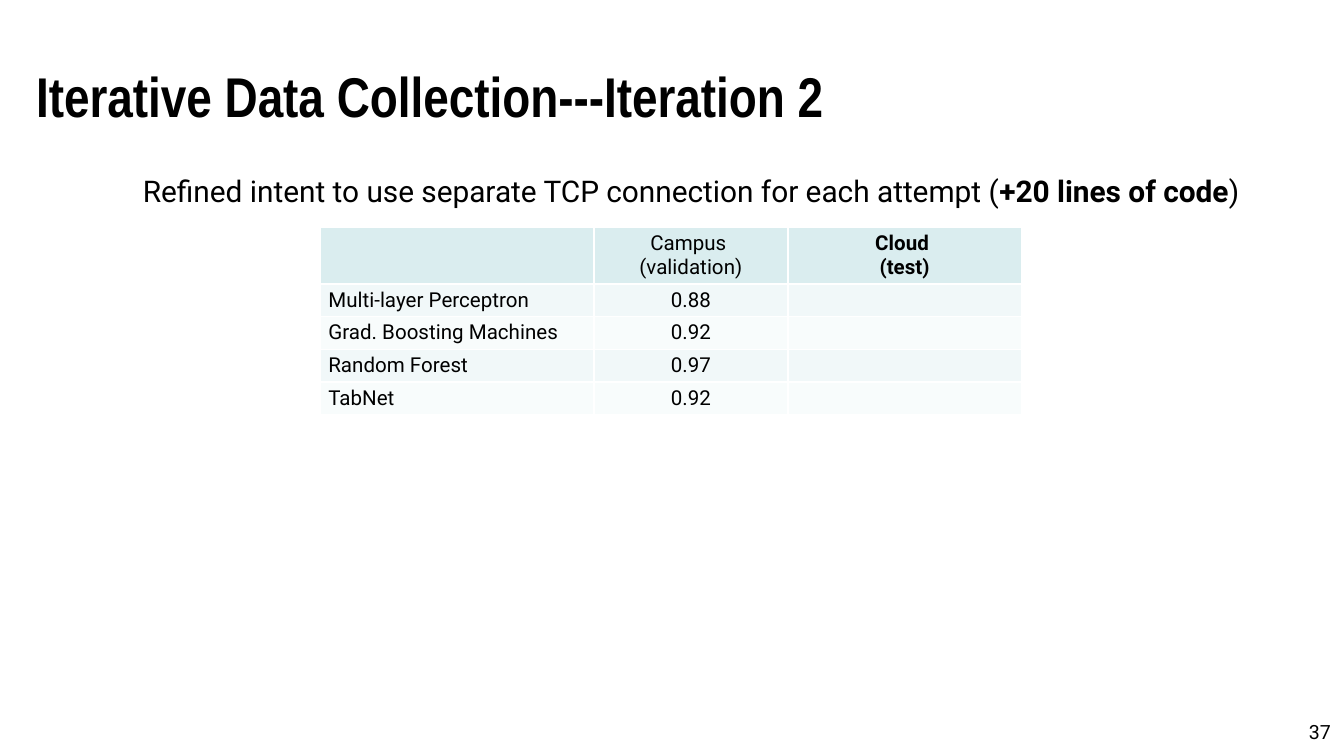
from dataclasses import dataclass

from lxml import etree
from pptx import Presentation
from pptx.dml.color import RGBColor
from pptx.enum.text import MSO_ANCHOR, MSO_AUTO_SIZE, PP_ALIGN
from pptx.oxml.ns import qn
from pptx.util import Pt

LEFT, CENTER, RIGHT = PP_ALIGN.LEFT, PP_ALIGN.CENTER, PP_ALIGN.RIGHT
TOP, MIDDLE = MSO_ANCHOR.TOP, MSO_ANCHOR.MIDDLE
NO_FIT = MSO_AUTO_SIZE.NONE

COLORS = {
    "text": "000000",
    "border": "FFFFFF",
    "header": "DAEDEF",
    "odd": "F1F8F9",
    "even": "F8FCFC",
}
BODY_FONT = "Roboto"
TITLE_FONT = "Arial Narrow"
CELL_SIZE = 11
COL_WIDTHS = (146.9, 103.7, 125.3)
HEADER_HEIGHT, ROW_HEIGHT = 30.5, 17.5


@dataclass(frozen=True)
class Score:
    model: str
    campus: str
    cloud: str = ""


SCORES = (
    Score("Multi-layer Perceptron", "0.88"),
    Score("Grad. Boosting Machines", "0.92"),
    Score("Random Forest", "0.97"),
    Score("TabNet", "0.92"),
)


def place(sp, left: float, top: float, width: float, height: float) -> None:
    sp.left, sp.top = Pt(left), Pt(top)
    sp.width, sp.height = Pt(width), Pt(height)


def style(p, size: float, name: str = BODY_FONT, bold: bool = False, align=LEFT) -> None:
    p.alignment = align
    p.font.size = Pt(size)
    p.font.name = name
    p.font.bold = bold
    p.font.color.rgb = RGBColor.from_string(COLORS["text"])


def set_borders(cell) -> None:
    tc_pr = cell._tc.get_or_add_tcPr()
    for i, side in enumerate(("lnL", "lnR", "lnT", "lnB")):
        ln = etree.Element(qn(f"a:{side}"), w=str(Pt(1)))
        fill = etree.SubElement(ln, qn("a:solidFill"))
        etree.SubElement(fill, qn("a:srgbClr"), val=COLORS["border"])
        tc_pr.insert(i, ln)


def fill_cell(cell, text: str, color: str, bold: bool = False, align=CENTER) -> None:
    cell.fill.solid()
    cell.fill.fore_color.rgb = RGBColor.from_string(COLORS[color])
    set_borders(cell)
    cell.margin_left = cell.margin_right = Pt(4.5)
    cell.margin_top = cell.margin_bottom = Pt(2.2)
    cell.text_frame.text = text
    for p in cell.text_frame.paragraphs:
        style(p, CELL_SIZE, bold=bold, align=align)
        if not text:
            etree.SubElement(p._p, qn("a:endParaRPr"), sz=str(CELL_SIZE * 100))


def add_scores(s) -> None:
    height = HEADER_HEIGHT + ROW_HEIGHT * len(SCORES)
    table = s.shapes.add_table(
        len(SCORES) + 1, len(COL_WIDTHS),
        Pt(171.4), Pt(121.7), Pt(sum(COL_WIDTHS)), Pt(height),
    ).table
    for col, width in zip(table.columns, COL_WIDTHS):
        col.width = Pt(width)
    for i, row in enumerate(table.rows):
        row.height = Pt(ROW_HEIGHT if i else HEADER_HEIGHT)
    for c, text in enumerate(("", "Campus \n(validation)", "Cloud \n(test)")):
        fill_cell(table.cell(0, c), text, "header", bold=c == 2)
    for i, score in enumerate(SCORES, 1):
        color = "odd" if i % 2 else "even"
        for c, text in enumerate((score.model, score.campus, score.cloud)):
            fill_cell(table.cell(i, c), text, color, align=CENTER if c else LEFT)


def add_title(s) -> None:
    sp = s.shapes.title
    place(sp, 12.2, 17.3, 689.8, 67.7)
    tf = sp.text_frame
    tf.text = "Iterative Data Collection---Iteration 2"
    tf.auto_size = NO_FIT
    tf.vertical_anchor = MIDDLE
    style(tf.paragraphs[0], 30, TITLE_FONT, bold=True)


def add_intent(s) -> None:
    sp = s.placeholders[1]
    place(sp, 8.6, 79.2, 696.2, 32.4)
    tf = sp.text_frame
    tf.auto_size = NO_FIT
    tf.vertical_anchor = TOP
    p = tf.paragraphs[0]
    p_pr = p._p.get_or_add_pPr()
    p_pr.set("marL", str(Pt(27)))
    p_pr.set("indent", "0")
    etree.SubElement(p_pr, qn("a:buNone"))
    p.space_before = Pt(0)
    p.line_spacing = 1.5
    style(p, 16, align=CENTER)
    p.add_run().text = "Refined intent to use separate TCP connection for each attempt ("
    r = p.add_run()
    r.text = "+20 lines of code"
    r.font.bold = True
    p.add_run().text = ")"


def add_page_number(s) -> None:
    tf = s.shapes.add_textbox(Pt(552.2), Pt(382.3), Pt(167.8), Pt(13.7)).text_frame
    tf.word_wrap = True
    tf.text = "37"
    style(tf.paragraphs[0], 10.5, align=RIGHT)


def main() -> None:
    prs = Presentation()
    prs.slide_width, prs.slide_height = Pt(720), Pt(405)
    s = prs.slides.add_slide(prs.slide_layouts[1])
    add_title(s)
    add_scores(s)
    add_page_number(s)
    add_intent(s)
    prs.save("out.pptx")


if __name__ == "__main__":
    main()
